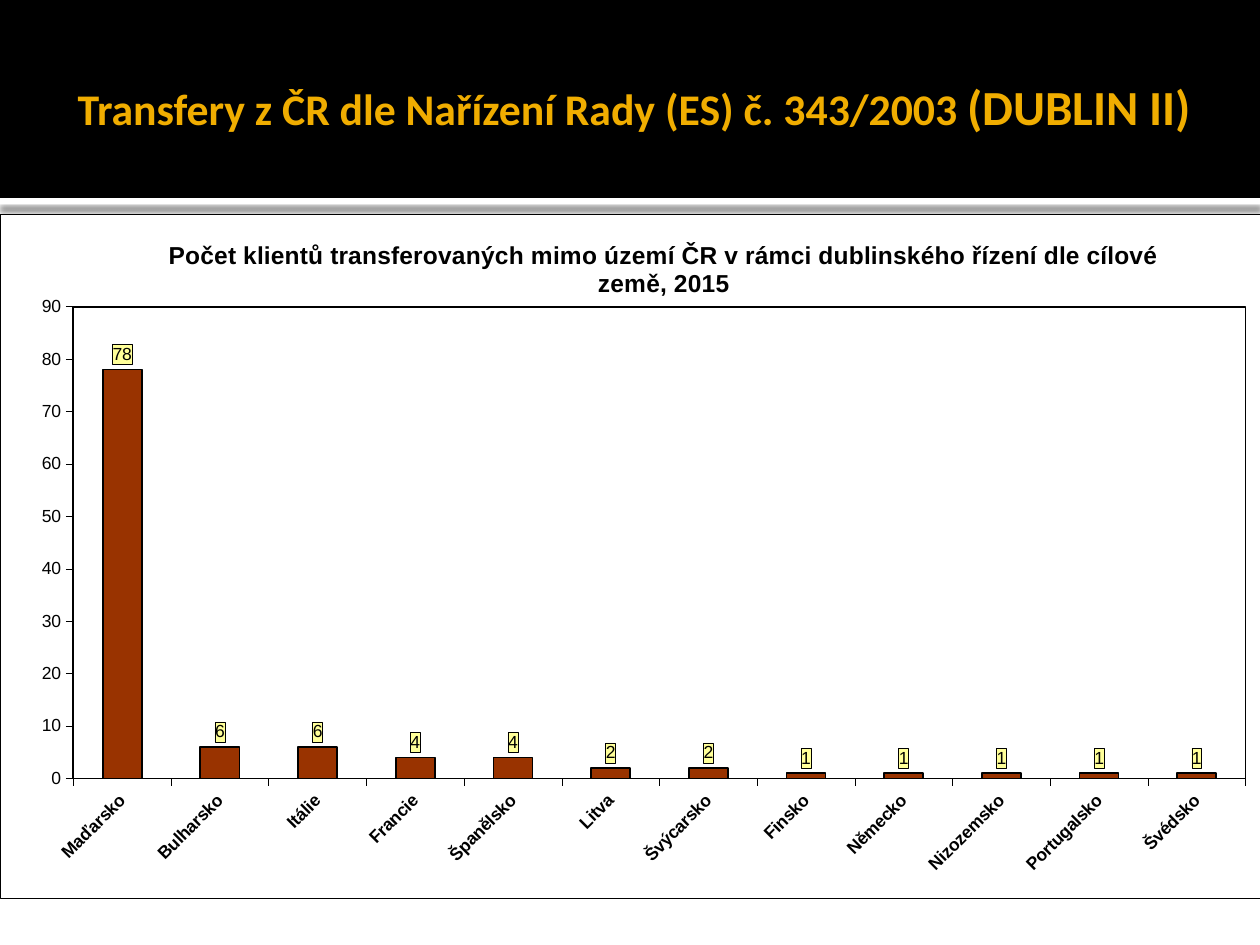
from pptx import Presentation
from pptx.chart.data import CategoryChartData
from pptx.dml.color import RGBColor
from pptx.enum import chart as ch, shapes, text
from pptx.oxml import parse_xml
from pptx.oxml.ns import nsdecls, qn
from pptx.util import Cm, Pt

BLACK = RGBColor(0x00, 0x00, 0x00)
WHITE = RGBColor(0xFF, 0xFF, 0xFF)
GOLD = RGBColor(0xF0, 0xAD, 0x00)
BROWN = RGBColor(0x99, 0x33, 0x00)
YELLOW = RGBColor(0xFF, 0xFF, 0x99)


def format_font(font, **values):
    color = values.pop("color", BLACK)
    for name, value in values.items():
        setattr(font, name, value)
    font.color.rgb = color


def chart_xml(kind, **values):
    """Build a manual layout or a filled and outlined shape format."""
    if kind == "layout":
        body = "".join(f'<c:{k} val="{v}"/>' for k, v in values.items())
        return parse_xml(f'<c:layout {nsdecls("c")}><c:manualLayout>{body}'
                         '</c:manualLayout></c:layout>')
    return parse_xml(
        f'<c:spPr {nsdecls("c", "a")}><a:solidFill><a:srgbClr val="{values["fill"]}"/>'
        f'</a:solidFill><a:ln w="{Pt(values["width"])}"><a:solidFill>'
        f'<a:srgbClr val="{BLACK}"/></a:solidFill></a:ln></c:spPr>')


prs = Presentation()
prs.slide_width, prs.slide_height = Cm(25.4), Cm(19.05)
s = prs.slides.add_slide(prs.slide_layouts[5])
title = s.shapes.title

# Header band and the white strip under it
for top, height, color in ((3.99, 0.13, WHITE), (0, 3.99, BLACK)):
    sp = s.shapes.add_shape(shapes.MSO_SHAPE.RECTANGLE, 0, Cm(top), prs.slide_width, Cm(height))
    sp.shadow.inherit = False
    sp.fill.solid()
    sp.fill.fore_color.rgb = color
    sp.line.fill.background()
    title._element.addprevious(sp._element)
    if color == WHITE:
        effects = sp._element.spPr.find(qn("a:effectLst"))
        effects.append(parse_xml(
            f'<a:outerShdw {nsdecls("a")} blurRad="{Pt(2.5)}" dist="{Pt(4)}" dir="5400000">'
            '<a:srgbClr val="000000"><a:alpha val="60000"/></a:srgbClr></a:outerShdw>'))

# Title
frame = dict(left=Cm(1.3), top=Cm(0.53), width=Cm(22.86), height=Cm(3.2))
for name, value in frame.items():
    setattr(title, name, value)
tf = title.text_frame
settings = dict(margin_left=Cm(0.25), margin_right=Cm(0.13), margin_top=Cm(0.13),
                margin_bottom=Cm(0.13), word_wrap=True,
                auto_size=text.MSO_AUTO_SIZE.NONE,
                vertical_anchor=text.MSO_ANCHOR.MIDDLE)
for name, value in settings.items():
    setattr(tf, name, value)
p = tf.paragraphs[0]
p.alignment = text.PP_ALIGN.CENTER
for words, size in (("Transfery z ČR dle Nařízení Rady (ES) č. 343/2003 ", 25),
                    ("(DUBLIN II)", 28)):
    r = p.add_run()
    r.text = words
    format_font(r.font, name="Calibri", size=Pt(size), bold=True, color=GOLD)

# Chart data
transfers = {"Maďarsko": 78, "Bulharsko": 6, "Itálie": 6, "Francie": 4,
             "Španělsko": 4, "Litva": 2, "Švýcarsko": 2, "Finsko": 1,
             "Německo": 1, "Nizozemsko": 1, "Portugalsko": 1, "Švédsko": 1}
data = CategoryChartData()
data.categories = list(transfers)
data.add_series("Series 1", list(transfers.values()))
chart = s.shapes.add_chart(ch.XL_CHART_TYPE.COLUMN_CLUSTERED, 0, Cm(4.32),
                           Cm(25.42), Cm(13.79), data).chart
format_font(chart.font, name="Arial", size=Pt(10))
chart.has_legend = False

# Chart title
chart.has_title = True
p = chart.chart_title.text_frame.paragraphs[0]
r = p.add_run()
r.text = ("Počet klientů transferovaných mimo území ČR v rámci "
          "dublinského řízení dle cílové země, 2015")
format_font(r.font, name="Arial", size=Pt(14), bold=True)
title_xml = chart.chart_title._element
for old in title_xml.findall(qn("c:layout")):
    title_xml.remove(old)
title_xml.find(qn("c:tx")).addnext(
    chart_xml("layout", xMode="edge", yMode="edge", x=0.13, y=0.03))

# Axes
for axis, bold in ((chart.category_axis, True), (chart.value_axis, False)):
    axis.has_major_gridlines = False
    axis.major_tick_mark = ch.XL_TICK_MARK.OUTSIDE
    axis.minor_tick_mark = ch.XL_TICK_MARK.NONE
    axis.format.line.color.rgb = BLACK
    axis.format.line.width = Pt(0.25)
    format_font(axis.tick_labels.font, name="Arial", size=Pt(10), bold=bold)
chart.category_axis._element.find(qn("c:txPr")).find(qn("a:bodyPr")).set("rot", "-2700000")
for name, value in dict(minimum_scale=0, maximum_scale=90, major_unit=10).items():
    setattr(chart.value_axis, name, value)

# Columns and value labels
plot = chart.plots[0]
plot.gap_width = 150
plot.vary_by_categories = False
series = plot.series[0]
series.format.fill.solid()
series.format.fill.fore_color.rgb = BROWN
series.format.line.color.rgb = BLACK
series.format.line.width = Pt(1)
labels = series.data_labels
labels.show_value = True
labels.position = ch.XL_LABEL_POSITION.OUTSIDE_END
format_font(labels.font, name="Arial", size=Pt(10))
labels._element.find(qn("c:txPr")).addprevious(chart_xml("format", fill=YELLOW, width=0.25))

# Plot area place and borders
area = chart._chartSpace.chart.plotArea
for old in area.findall(qn("c:layout")):
    area.remove(old)
area.insert(0, chart_xml("layout", layoutTarget="inner", xMode="edge", yMode="edge",
                         x=0.058, y=0.135, w=0.93, h=0.69))
area.append(chart_xml("format", fill=WHITE, width=1))
chart._chartSpace.chart.addnext(chart_xml("format", fill=WHITE, width=0.25))

prs.save("out.pptx")
